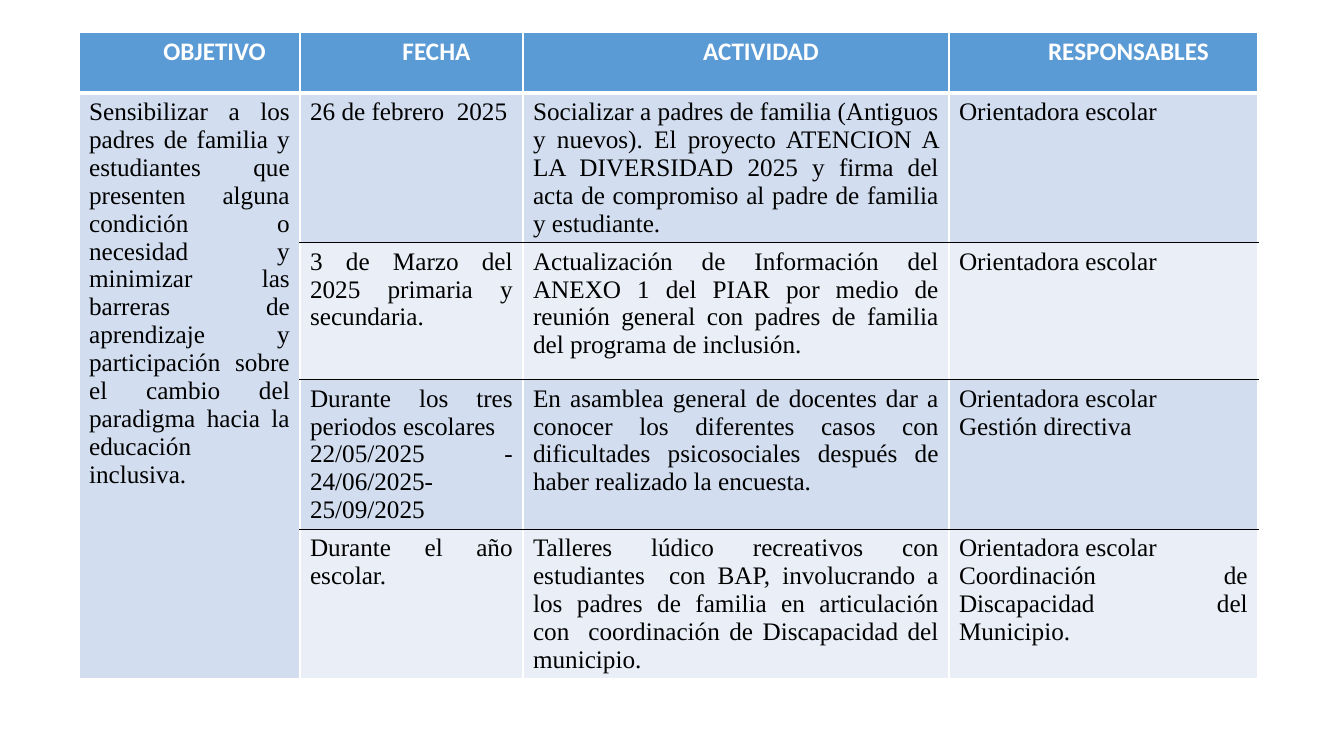
from dataclasses import dataclass

from lxml.etree import SubElement
from pptx import Presentation
from pptx.dml.color import RGBColor
from pptx.enum.text import PP_ALIGN
from pptx.oxml.ns import qn
from pptx.table import _Cell
from pptx.util import Emu, Pt

EMU_PER_PX = 914400 / 100.8


@dataclass(frozen=True)
class Theme:
    header: str = "5B9BD5"
    bands: tuple[str, str] = ("D2DEEF", "EAEFF7")
    white: str = "FFFFFF"
    black: str = "000000"
    header_font: str = "Calibri"
    body_font: str = "Times New Roman"
    size: int = 18


@dataclass(frozen=True)
class Activity:
    date: str
    task: str
    owner: str
    height: int


THEME = Theme()
HEADINGS = ("OBJETIVO", "FECHA", "ACTIVIDAD", "RESPONSABLES")
COLUMN_WIDTHS = (221, 223, 426, 309)
HEADER_HEIGHT = 61
GOAL = (
    "Sensibilizar a los padres de familia y estudiantes que presenten alguna "
    "condición o necesidad y minimizar las barreras de aprendizaje y participación "
    "sobre el cambio del paradigma hacia la educación inclusiva."
)
ACTIVITIES = (
    Activity(
        "26 de febrero  2025",
        "Socializar a padres de familia (Antiguos y nuevos). El proyecto ATENCION A "
        "LA DIVERSIDAD 2025 y firma del acta de compromiso al padre de familia y estudiante.",
        "Orientadora escolar",
        141,
    ),
    Activity(
        "3 de Marzo del 2025 primaria y secundaria.",
        "Actualización de Información del ANEXO 1 del PIAR por medio de reunión "
        "general con padres de familia del programa de inclusión.",
        "Orientadora escolar",
        137,
    ),
    Activity(
        "Durante los tres periodos escolares\n22/05/2025 - 24/06/2025- 25/09/2025",
        "En asamblea general de docentes dar a conocer los diferentes casos con "
        "dificultades psicosociales después de haber realizado la encuesta.",
        "Orientadora escolar\nGestión directiva",
        113,
    ),
    Activity(
        "Durante el año escolar.",
        "Talleres lúdico recreativos con estudiantes  con BAP, involucrando a los "
        "padres de familia en articulación con  coordinación de Discapacidad del municipio.",
        "Orientadora escolar\nCoordinación de Discapacidad del Municipio.",
        56,
    ),
)


def px(n: int) -> Emu:
    return Emu(round(n * EMU_PER_PX))


def write(cell: _Cell, text: str, *, font: str, color: str, align: PP_ALIGN,
          bold: bool = False, indent: int = 0, spacing: float | None = None) -> None:
    tf = cell.text_frame
    for i, line in enumerate(text.split("\n")):
        p = tf.paragraphs[0] if i == 0 else tf.add_paragraph()
        p.alignment = align
        p.line_spacing = spacing
        if indent:
            pPr = p._p.get_or_add_pPr()
            pPr.set("marL", str(px(indent)))
            pPr.set("indent", "0")
        r = p.add_run()
        r.text = line
        r.font.name = font
        r.font.size = Pt(THEME.size)
        r.font.bold = bold
        r.font.color.rgb = RGBColor.from_string(color)


def paint(cell: _Cell, fill: str, top: tuple[str, float], bottom: tuple[str, float]) -> None:
    side = (THEME.white, 1)
    tcPr = cell._tc.get_or_add_tcPr()
    for tag, (color, width) in zip(("lnL", "lnR", "lnT", "lnB"), (side, side, top, bottom)):
        ln = SubElement(tcPr, qn(f"a:{tag}"), w=str(Pt(width)))
        SubElement(SubElement(ln, qn("a:solidFill")), qn("a:srgbClr"), val=color)
    cell.fill.solid()
    cell.fill.fore_color.rgb = RGBColor.from_string(fill)


def main() -> None:
    prs = Presentation()
    prs.slide_width, prs.slide_height = px(1344), px(756)
    s = prs.slides.add_slide(prs.slide_layouts[6])
    last = len(ACTIVITIES)
    frame = s.shapes.add_table(last + 1, len(HEADINGS), px(79), px(32),
                               px(sum(COLUMN_WIDTHS)), px(682))
    table = frame.table
    for column, width in zip(table.columns, COLUMN_WIDTHS):
        column.width = px(width)
    for row, height in zip(table.rows, (HEADER_HEIGHT, *(a.height for a in ACTIVITIES))):
        row.height = px(height)
    frame.height = px(682)

    white, rule = (THEME.white, 1), (THEME.black, 0.25)
    for col, heading in enumerate(HEADINGS):
        cell = table.cell(0, col)
        cell.margin_left = cell.margin_right = px(7)
        cell.margin_top = cell.margin_bottom = 0
        paint(cell, THEME.header, white, (THEME.white, 3))
        write(cell, heading, font=THEME.header_font, color=THEME.white,
              align=PP_ALIGN.CENTER, bold=True, indent=50, spacing=1.15)

    table.cell(1, 0).merge(table.cell(last, 0))
    for row, activity in enumerate(ACTIVITIES, start=1):
        goal = GOAL if row == 1 else ""
        for col, text in enumerate((goal, activity.date, activity.task, activity.owner)):
            cell = table.cell(row, col)
            fill = THEME.bands[(row - 1) % 2] if col else THEME.bands[0]
            top = rule if col and row > 1 else white
            bottom = rule if col and row < last else white
            paint(cell, fill, top, bottom)
            if text:
                write(cell, text, font=THEME.body_font, color=THEME.black,
                      align=PP_ALIGN.JUSTIFY)

    prs.save("out.pptx")


if __name__ == "__main__":
    main()
